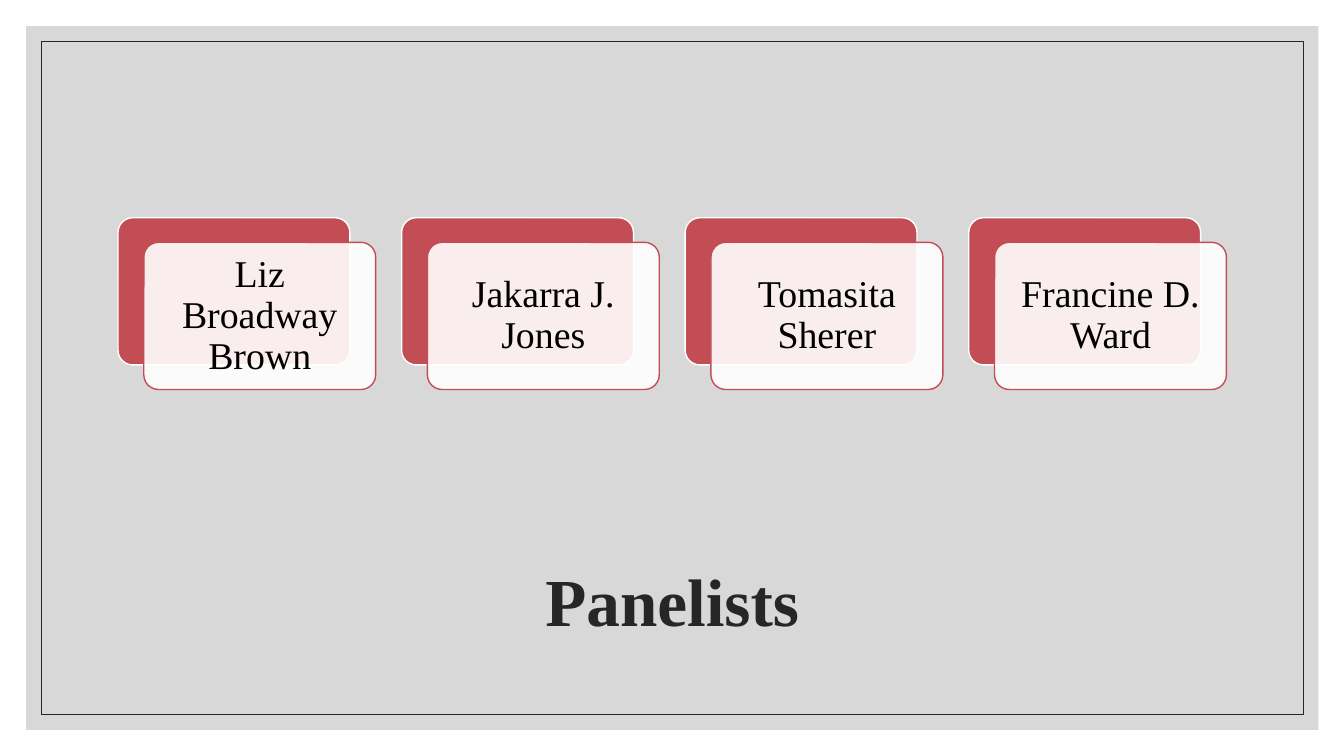
from dataclasses import dataclass

from lxml import etree
from pptx import Presentation
from pptx.dml.color import RGBColor
from pptx.enum.shapes import MSO_SHAPE
from pptx.enum.text import MSO_ANCHOR, PP_ALIGN
from pptx.oxml.ns import qn
from pptx.util import Inches, Pt

RECTANGLE = MSO_SHAPE.RECTANGLE
ROUNDED = MSO_SHAPE.ROUNDED_RECTANGLE
MIDDLE = MSO_ANCHOR.MIDDLE
CENTER = PP_ALIGN.CENTER

WHITE = RGBColor(0xFF, 0xFF, 0xFF)
BLACK = RGBColor(0x00, 0x00, 0x00)
GRAY = RGBColor(0xBF, 0xBF, 0xBF)
CHARCOAL = RGBColor(0x26, 0x26, 0x26)
RED = RGBColor(0xC3, 0x4D, 0x54)

FONT = "Times New Roman"
PAGE_WIDTH = Inches(13.33)
PAGE_HEIGHT = Inches(7.5)
PANELISTS = ["Liz Broadway Brown", "Jakarra J. Jones", "Tomasita Sherer", "Francine D. Ward"]


@dataclass
class Area:
    """Percentages of the page width and height."""
    left: float
    top: float
    width: float
    height: float

    def shifted(self, right: float, down: float) -> "Area":
        return Area(self.left + right, self.top + down, self.width, self.height)

    def lengths(self) -> tuple[int, int, int, int]:
        return (
            int(PAGE_WIDTH * self.left / 100),
            int(PAGE_HEIGHT * self.top / 100),
            int(PAGE_WIDTH * self.width / 100),
            int(PAGE_HEIGHT * self.height / 100),
        )


@dataclass
class Style:
    kind: MSO_SHAPE
    fill: RGBColor | None = None
    opacity: int = 100
    line: RGBColor | None = None
    line_width: float = 1


BACKDROP = Style(RECTANGLE, fill=GRAY, opacity=60)
FRAME = Style(RECTANGLE, line=CHARCOAL, line_width=0.5)
BACK_CARD = Style(ROUNDED, fill=RED, line=WHITE)
FRONT_CARD = Style(ROUNDED, fill=WHITE, opacity=90, line=RED)

BACKDROP_AREA = Area(1.95, 3.47, 96.15, 93.07)
FRAME_AREA = Area(3.07, 5.47, 93.9, 89.07)
TITLE_AREA = Area(8.78, 70, 82.5, 20)
FIRST_CARD_AREA = Area(8.78, 28.8, 17.25, 19.47)
CARD_PITCH = 21.1
FRONT_RIGHT, FRONT_DOWN = 1.92, 3.25


def add_panel(page, area: Area, style: Style):
    box = page.shapes.add_shape(style.kind, *area.lengths())
    box.shadow.inherit = False
    if style.kind == ROUNDED:
        box.adjustments[0] = 0.1
    if style.fill is None:
        box.fill.background()
    else:
        box.fill.solid()
        box.fill.fore_color.rgb = style.fill
        if style.opacity < 100:
            color = box.fill._xPr.find(qn("a:solidFill"))[0]
            etree.SubElement(color, qn("a:alpha"), val=str(style.opacity * 1000))
    if style.line is None:
        box.line.fill.background()
    else:
        box.line.color.rgb = style.line
        box.line.width = Pt(style.line_width)
    return box


def write(box, text: str, size: int, color: RGBColor, bold: bool = False) -> None:
    frame = box.text_frame
    frame.text = text
    frame.word_wrap = True
    frame.vertical_anchor = MIDDLE
    para = frame.paragraphs[0]
    para.alignment = CENTER
    para.line_spacing = 0.9
    font = para.runs[0].font
    font.name = FONT
    font.size = Pt(size)
    font.bold = bold
    font.color.rgb = color


def add_panelist(page, name: str, area: Area) -> None:
    add_panel(page, area, BACK_CARD)
    card = add_panel(page, area.shifted(FRONT_RIGHT, FRONT_DOWN), FRONT_CARD)
    write(card, name, 27, BLACK)
    frame = card.text_frame
    frame.margin_left = frame.margin_right = Inches(0.11)
    frame.margin_top = frame.margin_bottom = Inches(0.11)


def main() -> None:
    deck = Presentation()
    deck.slide_width = PAGE_WIDTH
    deck.slide_height = PAGE_HEIGHT
    page = deck.slides.add_slide(deck.slide_layouts[6])
    add_panel(page, BACKDROP_AREA, BACKDROP)
    add_panel(page, FRAME_AREA, FRAME)
    title = page.shapes.add_textbox(*TITLE_AREA.lengths())
    write(title, "Panelists", 48, CHARCOAL, bold=True)
    for column, name in enumerate(PANELISTS):
        add_panelist(page, name, FIRST_CARD_AREA.shifted(column * CARD_PITCH, 0))
    deck.save("out.pptx")


if __name__ == "__main__":
    main()
